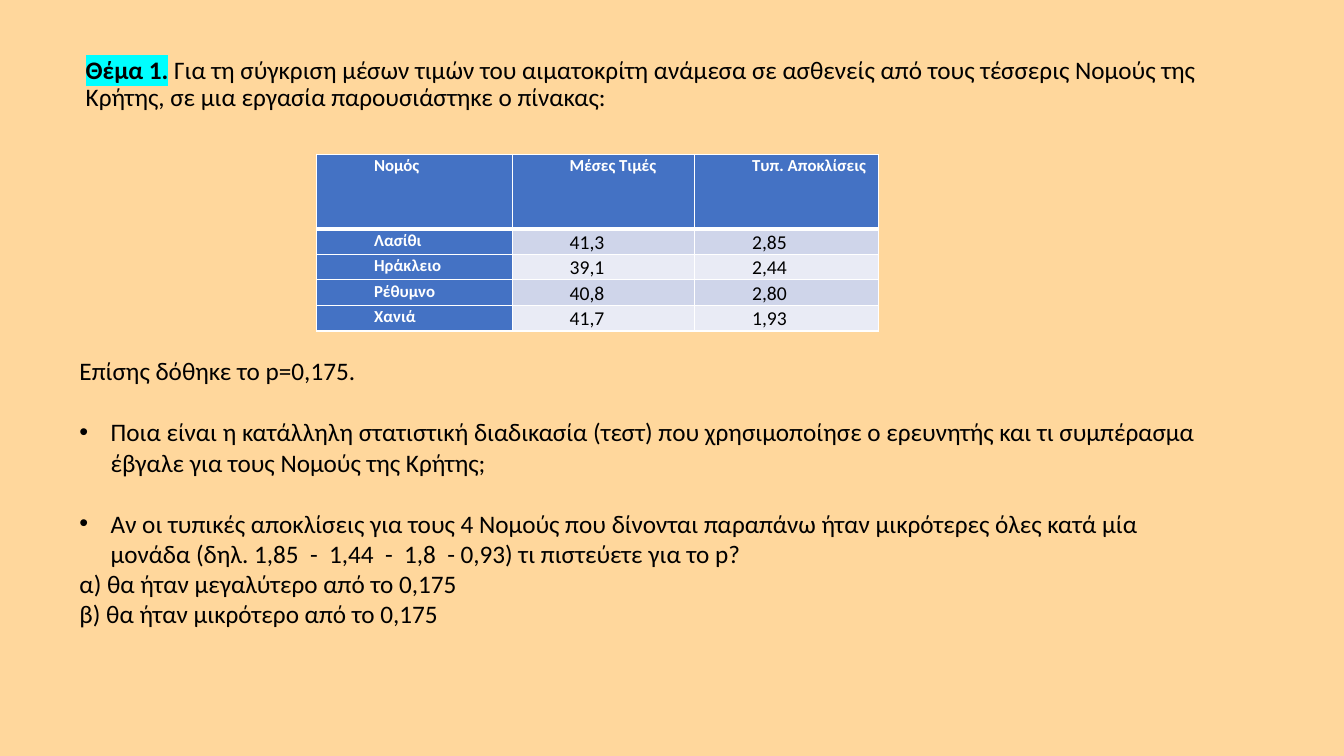
import pptx
import pptx.dml.color
import pptx.enum.text
import pptx.oxml
import pptx.oxml.ns
import pptx.util

Inches = pptx.util.Inches
Pt = pptx.util.Pt
RGBColor = pptx.dml.color.RGBColor

SAND = RGBColor(0xFF, 0xD7, 0x9C)
BLACK = RGBColor(0x00, 0x00, 0x00)
WHITE = RGBColor(0xFF, 0xFF, 0xFF)
BLUE = RGBColor(0x44, 0x72, 0xC4)
BANDS = (RGBColor(0xCF, 0xD5, 0xEA), RGBColor(0xE9, 0xEB, 0xF5))
CYAN = RGBColor(0x00, 0xFF, 0xFF)
FONT = "Calibri"

PREFECTURES = [
    ("Νομός", "Μέσες Τιμές", "Τυπ. Αποκλίσεις"),
    ("Λασίθι", "41,3", "2,85"),
    ("Ηράκλειο", "39,1", "2,44"),
    ("Ρέθυμνο", "40,8", "2,80"),
    ("Χανιά", "41,7", "1,93"),
]
COLUMN_WIDTHS = (1.94, 1.81, 1.82)
HEADER_HEIGHT, ROW_HEIGHT = 0.74, 0.24

# Each entry: text, bulleted, space before in points
QUESTIONS = [
    ("Επίσης δόθηκε το p=0,175.", False, 0),
    ("Ποια είναι η κατάλληλη στατιστική διαδικασία (τεστ) που χρησιμοποίησε ο "
     "ερευνητής και τι συμπέρασμα έβγαλε για τους Νομούς της Κρήτης;", True, 22),
    ("Αν οι τυπικές αποκλίσεις για τους 4 Νομούς που δίνονται παραπάνω ήταν "
     "μικρότερες όλες κατά μία μονάδα (δηλ. 1,85  -  1,44  -  1,8  - 0,93) "
     "τι πιστεύετε για το p?", True, 22),
    ("α) θα ήταν μεγαλύτερο από το 0,175", False, 0),
    ("β) θα ήταν μικρότερο από το 0,175", False, 0),
]


def xml(markup):
    tag, _, rest = markup.partition(" ")
    namespace = pptx.oxml.ns.nsdecls("a")
    return pptx.oxml.parse_xml(f"<a:{tag} {namespace} {rest}")


def add_text(paragraph, text, size=18, color=BLACK, bold=False, highlight=None):
    run = paragraph.add_run()
    run.text = text
    run.font.size = Pt(size)
    run.font.bold = bold
    run.font.name = FONT
    run.font.color.rgb = color
    if highlight is not None:
        latin = run.font._element.find(pptx.oxml.ns.qn("a:latin"))
        latin.addprevious(xml(
            f'highlight ><a:srgbClr val="{highlight}"/></a:highlight>'))


def set_indent(paragraph, left=0, first=0, bullet=None):
    properties = paragraph._p.get_or_add_pPr()
    properties.set("marL", str(Inches(left)))
    properties.set("indent", str(Inches(first)))
    if bullet:
        properties.append(xml('buFont typeface="Arial"/>'))
        properties.append(xml(f'buChar char="{bullet}"/>'))
    else:
        properties.append(xml("buNone />"))


def set_borders(cell, **widths):
    properties = cell._tc.get_or_add_tcPr()
    for position, side in enumerate("LRTB"):
        width = Pt(widths.get(side, 1))
        properties.insert(position, xml(
            f'ln{side} w="{width}"><a:solidFill><a:srgbClr val="{WHITE}"/>'
            f"</a:solidFill></a:ln{side}>"))


def fill_cell(cell, text, row, column):
    heading = row == 0 or column == 0
    cell.margin_left = cell.margin_right = Inches(0.07)
    cell.margin_top = cell.margin_bottom = 0
    cell.fill.solid()
    cell.fill.fore_color.rgb = BLUE if heading else BANDS[(row - 1) % 2]
    set_borders(cell, T=3 if row == 1 else 1, B=3 if row == 0 else 1)
    paragraph = cell.text_frame.paragraphs[0]
    paragraph.line_spacing = 1.07
    if column == 2:
        paragraph.space_after = Pt(8)
    set_indent(paragraph, left=0.5)
    add_text(paragraph, text, size=12 if heading else 14,
             color=WHITE if heading else BLACK, bold=heading)


def add_statement(slide):
    statement = slide.placeholders[1]
    statement.left, statement.top = Inches(0.75), Inches(0.52)
    statement.width, statement.height = Inches(11.67), Inches(6.23)
    statement.text_frame.vertical_anchor = pptx.enum.text.MSO_ANCHOR.TOP
    paragraph = statement.text_frame.paragraphs[0]
    paragraph.line_spacing = 0.9
    paragraph.space_before = Pt(10)
    set_indent(paragraph)
    add_text(paragraph, "Θέμα 1.", bold=True, highlight=CYAN)
    add_text(paragraph, " Για τη σύγκριση μέσων τιμών του αιματοκρίτη ανάμεσα σε "
             "ασθενείς από τους τέσσερις Νομούς της Κρήτης, σε μια εργασία "
             "παρουσιάστηκε ο πίνακας:")


def add_prefecture_table(slide):
    table = slide.shapes.add_table(
        len(PREFECTURES), len(COLUMN_WIDTHS), Inches(3.14), Inches(1.53),
        Inches(sum(COLUMN_WIDTHS)), Inches(1.71)).table
    table.first_col = True
    for column, width in zip(table.columns, COLUMN_WIDTHS):
        column.width = Inches(width)
    for row, values in enumerate(PREFECTURES):
        table.rows[row].height = Inches(ROW_HEIGHT if row else HEADER_HEIGHT)
        for column, value in enumerate(values):
            fill_cell(table.cell(row, column), value, row, column)


def add_questions(slide):
    frame = slide.shapes.add_textbox(
        Inches(0.69), Inches(3.48), Inches(11.26), Inches(2.83)).text_frame
    frame.word_wrap = True
    for number, (text, bulleted, gap) in enumerate(QUESTIONS):
        paragraph = frame.add_paragraph() if number else frame.paragraphs[0]
        paragraph.space_before = Pt(gap)
        if bulleted:
            set_indent(paragraph, left=0.31, first=-0.31, bullet="•")
        add_text(paragraph, text)


def main():
    presentation = pptx.Presentation()
    presentation.slide_width = Inches(13.33)
    presentation.slide_height = Inches(7.5)
    slide = presentation.slides.add_slide(presentation.slide_layouts[1])

    # Background, with the unused title removed
    slide.background.fill.solid()
    slide.background.fill.fore_color.rgb = SAND
    title = slide.shapes.title._element
    title.getparent().remove(title)

    # Problem statement, data and questions
    add_statement(slide)
    add_prefecture_table(slide)
    add_questions(slide)
    presentation.save("out.pptx")


if __name__ == "__main__":
    main()
